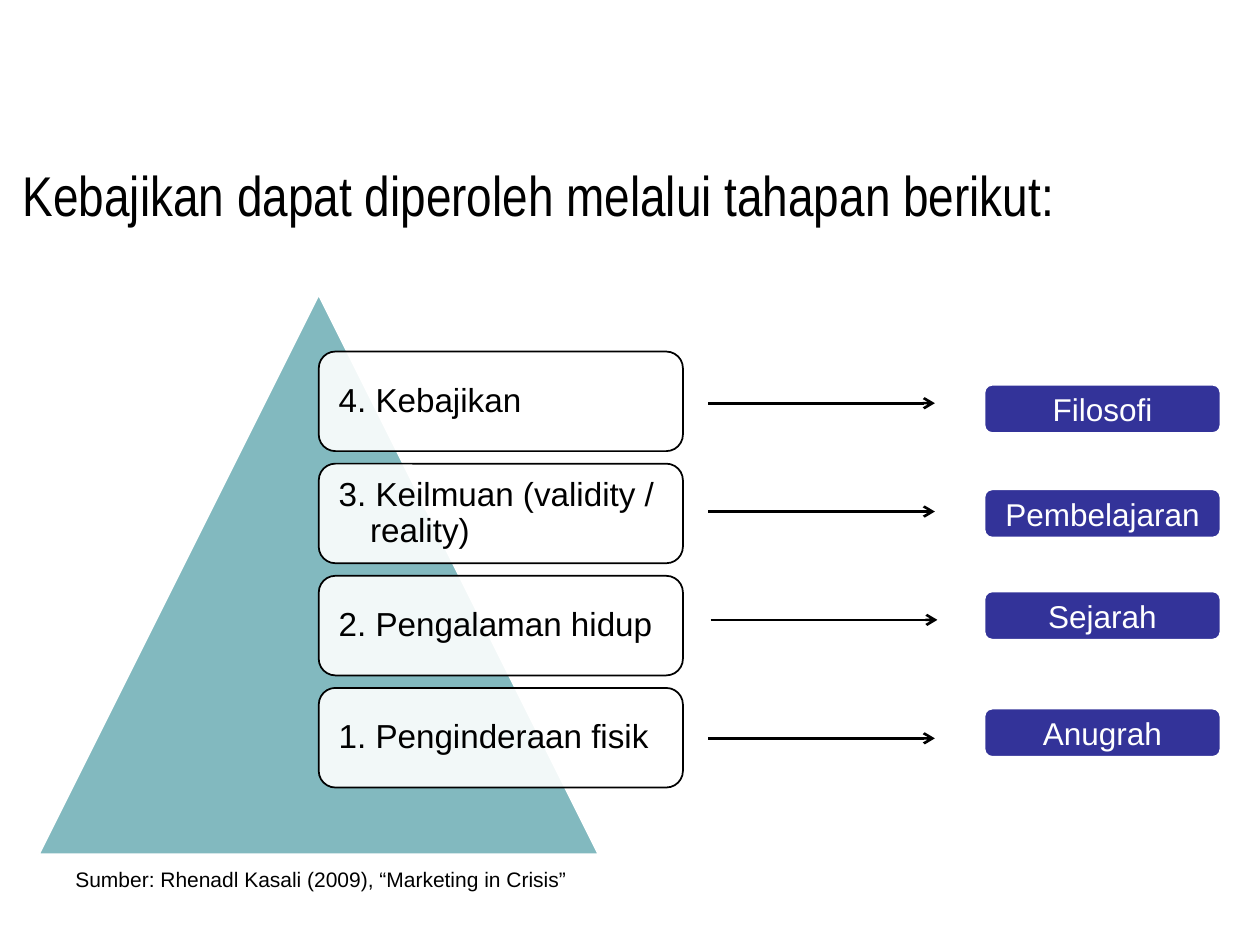
from lxml import etree
from pptx import Presentation
from pptx.dml.color import RGBColor
from pptx.enum.shapes import MSO_CONNECTOR, MSO_SHAPE
from pptx.enum.text import MSO_ANCHOR, MSO_AUTO_SIZE, PP_ALIGN
from pptx.oxml.ns import qn
from pptx.util import Inches, Pt

TRIANGLE = MSO_SHAPE.ISOSCELES_TRIANGLE
ROUNDED = MSO_SHAPE.ROUNDED_RECTANGLE
STRAIGHT = MSO_CONNECTOR.STRAIGHT
MIDDLE = MSO_ANCHOR.MIDDLE
LEFT, CENTER = PP_ALIGN.LEFT, PP_ALIGN.CENTER
COLORS = {"teal": "4597A0", "navy": "333399", "white": "FFFFFF", "black": "000000"}


def add_box(kind, at, fill, line, line_width, opacity=100):
    box = slide.shapes.add_shape(kind, *(Inches(v) for v in at))
    box.shadow.inherit = False
    box.fill.solid()
    box.fill.fore_color.rgb = RGBColor.from_string(COLORS[fill])
    if opacity < 100:
        color = box.fill._xPr.find(qn("a:solidFill"))[0]
        etree.SubElement(color, qn("a:alpha"), val=str(opacity * 1000))
    box.line.color.rgb = RGBColor.from_string(COLORS[line])
    box.line.width = Pt(line_width)
    return box


def write(frame, text, size, color, align=LEFT, font="Arial"):
    paragraph = frame.paragraphs[0]
    paragraph.alignment = align
    run = paragraph.add_run()
    run.text = text
    run.font.name = font
    run.font.size = Pt(size)
    run.font.color.rgb = RGBColor.from_string(COLORS[color])
    return paragraph


prs = Presentation()
prs.slide_width, prs.slide_height = Inches(10), Inches(7.5)
slide = prs.slides.add_slide(prs.slide_layouts[5])

title = slide.shapes.title
title.left, title.top = Inches(0.08), Inches(1)
title.width, title.height = Inches(9), Inches(1.08)
title.text_frame.vertical_anchor = MIDDLE
title.text_frame.auto_size = MSO_AUTO_SIZE.NONE
write(title.text_frame, "Kebajikan dapat diperoleh melalui tahapan berikut:", 32, "black",
      font="Arial Narrow")

add_box(TRIANGLE, (0.31, 2.34, 4.44, 4.44), "teal", "white", 1, opacity=67)

stages = [
    ("4. Kebajikan", 5.62, 3.2, "Filosofi", 3.05),
    ("3. Keilmuan (validity / reality)", 5.62, 4.06, "Pembelajaran", 3.88),
    ("2. Pengalaman hidup", 5.64, 4.92, "Sejarah", 4.69),
    ("1. Penginderaan fisik", 5.62, 5.86, "Anugrah", 5.62),
]
for index, (stage, arrow_left, arrow_top, source, source_top) in enumerate(stages):
    stage_box = add_box(ROUNDED, (2.53, 2.79 + index * 0.89, 2.89, 0.79),
                        "white", "black", 1, opacity=90)
    frame = stage_box.text_frame
    frame.word_wrap = True
    frame.vertical_anchor = MIDDLE
    frame.margin_left = frame.margin_right = Inches(0.12)
    frame.margin_top = frame.margin_bottom = Inches(0.08)
    paragraph = write(frame, stage, 19, "black")
    paragraph.line_spacing = 0.9
    properties = paragraph._p.get_or_add_pPr()
    properties.set("marL", str(Inches(0.25)))
    properties.set("indent", str(Inches(-0.25)))

    arrow = slide.shapes.add_connector(STRAIGHT, Inches(arrow_left), Inches(arrow_top),
                                       Inches(arrow_left + 1.8), Inches(arrow_top))
    arrow.line.color.rgb = RGBColor.from_string(COLORS["black"])
    arrow.line.width = Pt(1.5)
    etree.SubElement(arrow.line._get_or_add_ln(), qn("a:tailEnd"), type="arrow")
    etree.SubElement(arrow._element.spPr, qn("a:effectLst"))

    source_box = add_box(ROUNDED, (7.81, source_top, 1.88, 0.39), "navy", "white", 1.5)
    source_box.text_frame.vertical_anchor = MIDDLE
    write(source_box.text_frame, source, 18, "white", CENTER)

citation = slide.shapes.add_textbox(Inches(0.5), Inches(6.83), Inches(4.13), Inches(0.3))
citation.text_frame.word_wrap = False
citation.text_frame.auto_size = MSO_AUTO_SIZE.SHAPE_TO_FIT_TEXT
write(citation.text_frame, "Sumber: Rhenadl Kasali (2009), “Marketing in Crisis”", 12, "black")

prs.save("out.pptx")
